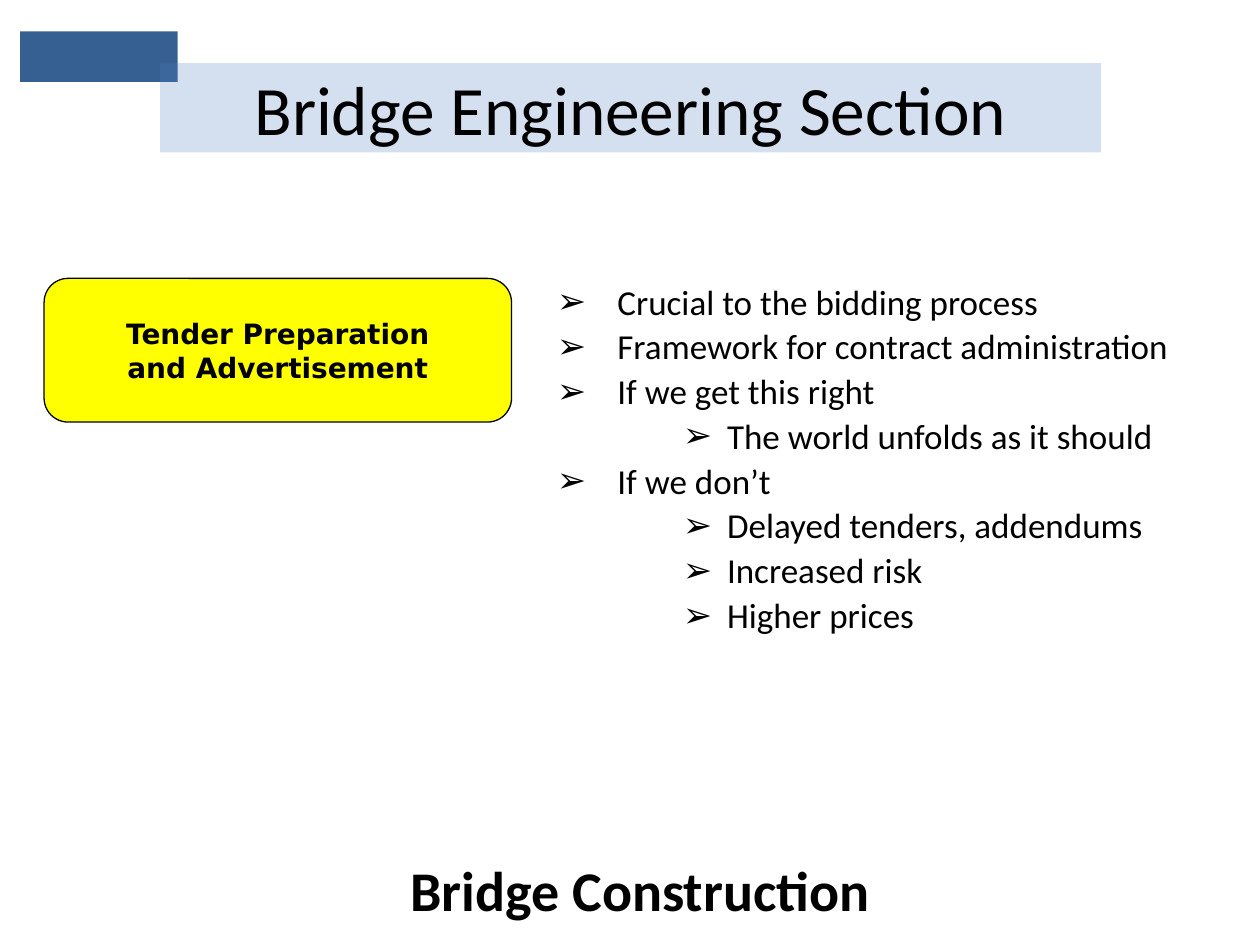
from lxml import etree
from pptx import Presentation
from pptx.dml.color import RGBColor
from pptx.enum import shapes, text
from pptx.oxml import ns
from pptx.util import Inches, Pt

BLACK = RGBColor(0x00, 0x00, 0x00)
NAVY = RGBColor(0x37, 0x60, 0x92)
BLUE = RGBColor(0x4F, 0x81, 0xBD)
YELLOW = RGBColor(0xFF, 0xFF, 0x00)

# Level: (text indent, hanging bullet width) in inches
INDENTS = {1: (0.98, 0.48), 3: (1.85, 0.35)}
POINTS = [
    (1, "Crucial to the bidding process"),
    (1, "Framework for contract administration"),
    (1, "If we get this right"),
    (3, "The world unfolds as it should"),
    (1, "If we don’t"),
    (3, "Delayed tenders, addendums"),
    (3, "Increased risk"),
    (3, "Higher prices"),
]


def place(shape, left, top, width, height):
    shape.left, shape.top = Inches(left), Inches(top)
    shape.width, shape.height = Inches(width), Inches(height)


def set_font(paragraph, size, name="Calibri", bold=False):
    font = paragraph.font
    font.size, font.name, font.bold = Pt(size), name, bold
    font.color.rgb = BLACK


def add_filled_shape(slide, kind, box, color):
    shape = slide.shapes.add_shape(kind, *map(Inches, box))
    shape.shadow.inherit = False
    shape.fill.solid()
    shape.fill.fore_color.rgb = color
    shape.line.fill.background()
    return shape


def add_corner_block(slide, box):
    """Place the dark block behind everything else."""
    block = add_filled_shape(slide, shapes.MSO_SHAPE.RECTANGLE, box, NAVY)
    slide.shapes.element.insert(2, block.element)


def fill_title(slide, box):
    title = slide.shapes.title
    place(title, *box)
    title.fill.solid()
    title.fill.fore_color.rgb = BLUE
    color = title.element.spPr.find(".//" + ns.qn("a:srgbClr"))
    etree.SubElement(color, ns.qn("a:alpha"), val="24000")
    frame = title.text_frame
    frame.text = "Bridge Engineering Section"
    frame.auto_size = text.MSO_AUTO_SIZE.NONE
    frame.vertical_anchor = text.MSO_ANCHOR.MIDDLE
    frame.paragraphs[0].alignment = text.PP_ALIGN.CENTER
    set_font(frame.paragraphs[0], 39.6)


def set_bullet(paragraph, indent, hanging):
    properties = paragraph._p.get_or_add_pPr()
    properties.set("marL", str(Inches(indent)))
    properties.set("indent", str(-Inches(hanging)))
    etree.SubElement(properties, ns.qn("a:buChar"), char="➢")


def fill_points(slide, box):
    body = slide.placeholders[1]
    place(body, *box)
    frame = body.text_frame
    frame.text = "\n".join(words for _, words in POINTS)
    frame.auto_size = text.MSO_AUTO_SIZE.NONE
    for index, (level, _) in enumerate(POINTS):
        paragraph = frame.paragraphs[index]
        paragraph.level = level
        paragraph.line_spacing = 0.9
        paragraph.space_before = Pt(4 if index else 0)
        set_bullet(paragraph, *INDENTS[level])
        set_font(paragraph, 20)


def add_topic(slide, box):
    topic = add_filled_shape(slide, shapes.MSO_SHAPE.ROUNDED_RECTANGLE, box, YELLOW)
    topic.line.color.rgb = BLACK
    topic.line.width = Pt(0.75)
    frame = topic.text_frame
    frame.text = "Tender Preparation\nand Advertisement"
    frame.word_wrap = False
    frame.vertical_anchor = text.MSO_ANCHOR.MIDDLE
    for paragraph in frame.paragraphs:
        paragraph.alignment = text.PP_ALIGN.CENTER
        set_font(paragraph, 16, "DejaVu Sans", bold=True)


def add_footer(slide, box):
    frame = slide.shapes.add_textbox(*map(Inches, box)).text_frame
    frame.text = "Bridge Construction"
    frame.word_wrap = False
    frame.auto_size = text.MSO_AUTO_SIZE.SHAPE_TO_FIT_TEXT
    set_font(frame.paragraphs[0], 32, bold=True)


def main():
    presentation = Presentation()
    presentation.slide_width, presentation.slide_height = Inches(10), Inches(7.5)
    slide = presentation.slides.add_slide(presentation.slide_layouts[1])
    add_corner_block(slide, (0.16, 0.25, 1.25, 0.4))
    fill_title(slide, (1.27, 0.5, 7.47, 0.71))
    fill_points(slide, (3.82, 2.21, 6.18, 4.5))
    add_footer(slide, (3.16, 6.74, 3.89, 0.64))
    add_topic(slide, (0.35, 2.21, 3.71, 1.14))
    presentation.save("out.pptx")


if __name__ == "__main__":
    main()
